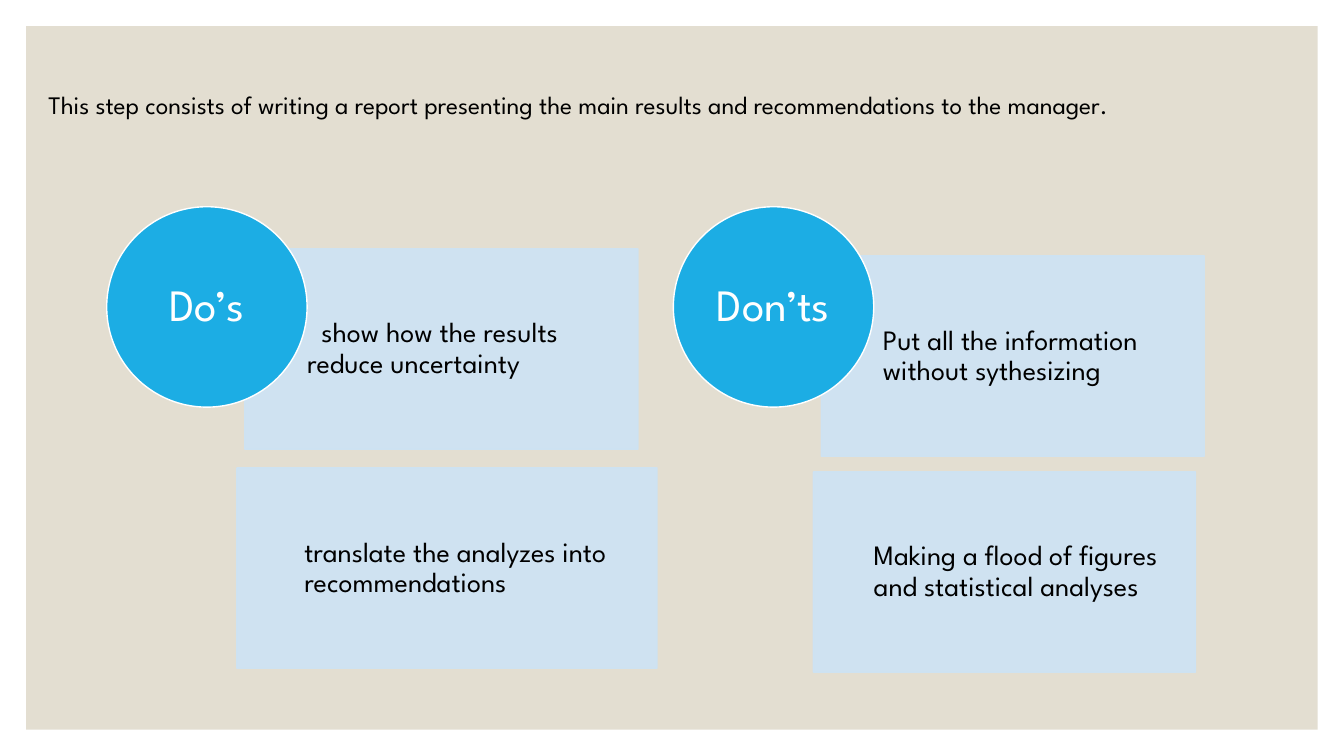
from dataclasses import dataclass

import pptx
import pptx.dml.color
import pptx.enum.shapes
import pptx.enum.text
import pptx.oxml.ns
import pptx.util
from lxml import etree

Cm = pptx.util.Cm
Pt = pptx.util.Pt
RGB = pptx.dml.color.RGBColor.from_string
SHAPE = pptx.enum.shapes.MSO_SHAPE
ALIGN = pptx.enum.text.PP_ALIGN
ANCHOR = pptx.enum.text.MSO_ANCHOR


@dataclass(frozen=True)
class Theme:
    font: str = "League Spartan"
    panel: str = "E3DED1"
    card: str = "CDE3F5"
    circle: str = "1CADE4"
    light: str = "FFFFFF"
    dark: str = "000000"
    card_opacity: int = 90
    intro_size: int = 18
    advice_size: int = 20
    heading_size: int = 32


THEME = Theme()
INTRO = (
    "This step consists of writing a report presenting the main results "
    "and recommendations to the manager."
)
GROUPS = [
    {
        "heading": "Do’s",
        "circle_left": 2.69,
        "cards": [
            {"advice": "show how the results reduce uncertainty",
             "left": 6.17, "top": 6.27, "width": 9.91, "inset": 1.57, "indent": 0.36},
            {"advice": "translate the analyzes into recommendations",
             "left": 5.97, "top": 11.79, "width": 10.59, "inset": 1.7, "indent": 0},
        ],
    },
    {
        "heading": "Don’ts",
        "circle_left": 16.97,
        "cards": [
            {"advice": "Put all the information without sythesizing",
             "left": 20.7, "top": 6.45, "width": 9.65, "inset": 1.55, "indent": 0},
            {"advice": "Making a flood of figures and statistical analyses",
             "left": 20.5, "top": 11.89, "width": 9.63, "inset": 1.52, "indent": 0},
        ],
    },
]
SLIDE_WIDTH, SLIDE_HEIGHT = 33.87, 19.05
MARGIN = 0.66
UNIT = 5.05
CIRCLE_TOP = 5.21
CARD_PADDING = 0.4


def add_block(slide, kind, left, top, width, height, fill, line=None):
    block = slide.shapes.add_shape(kind, Cm(left), Cm(top), Cm(width), Cm(height))
    block.shadow.inherit = False
    block.fill.solid()
    block.fill.fore_color.rgb = RGB(fill)
    if line:
        block.line.color.rgb = RGB(line)
        block.line.width = Pt(1)
    else:
        block.line.fill.background()
    return block


def write(holder, wording, size, color, align, anchor, insets, spacing=0.9):
    frame = holder.text_frame
    frame.word_wrap = True
    frame.auto_size = pptx.enum.text.MSO_AUTO_SIZE.NONE
    frame.vertical_anchor = anchor
    frame.margin_left, frame.margin_top, frame.margin_right, frame.margin_bottom = map(Cm, insets)
    paragraph = frame.paragraphs[0]
    paragraph.alignment = align
    paragraph.line_spacing = spacing
    run = paragraph.add_run()
    run.text = wording
    run.font.name = THEME.font
    run.font.size = Pt(size)
    run.font.color.rgb = RGB(color)
    return paragraph


def set_opacity(block, percent):
    for color in block._element.spPr.iter(pptx.oxml.ns.qn("a:srgbClr")):
        alpha = etree.SubElement(color, pptx.oxml.ns.qn("a:alpha"))
        alpha.set("val", str(percent * 1000))


def add_card(slide, card):
    block = add_block(slide, SHAPE.RECTANGLE, card["left"], card["top"],
                      card["width"], UNIT, THEME.card, THEME.card)
    set_opacity(block, THEME.card_opacity)
    advice = write(block, card["advice"], THEME.advice_size, THEME.dark, ALIGN.LEFT,
                   ANCHOR.MIDDLE, (card["inset"], CARD_PADDING, CARD_PADDING, CARD_PADDING))
    if card["indent"]:
        advice._p.get_or_add_pPr().set("indent", str(Cm(card["indent"])))


def main():
    deck = pptx.Presentation()
    deck.slide_width, deck.slide_height = Cm(SLIDE_WIDTH), Cm(SLIDE_HEIGHT)
    slide = deck.slides.add_slide(deck.slide_layouts[5])

    panel = add_block(slide, SHAPE.RECTANGLE, MARGIN, MARGIN, SLIDE_WIDTH - 2 * MARGIN,
                      SLIDE_HEIGHT - 2 * MARGIN, THEME.panel)
    intro = slide.shapes.title
    intro._element.addprevious(panel._element)
    intro.left, intro.top, intro.width, intro.height = Cm(0.97), Cm(2.13), Cm(30.61), Cm(2.82)
    write(intro, INTRO, THEME.intro_size, THEME.dark, ALIGN.LEFT, ANCHOR.TOP,
          (0.25, 0.13, 0.25, 0.13), 1.0)

    for group in GROUPS:
        for card in group["cards"]:
            add_card(slide, card)
        circle = add_block(slide, SHAPE.OVAL, group["circle_left"], CIRCLE_TOP, UNIT, UNIT,
                           THEME.circle, THEME.light)
        write(circle, group["heading"], THEME.heading_size, THEME.light, ALIGN.CENTER,
              ANCHOR.MIDDLE, (0, 0, 0, 0))

    deck.save("out.pptx")


if __name__ == "__main__":
    main()
